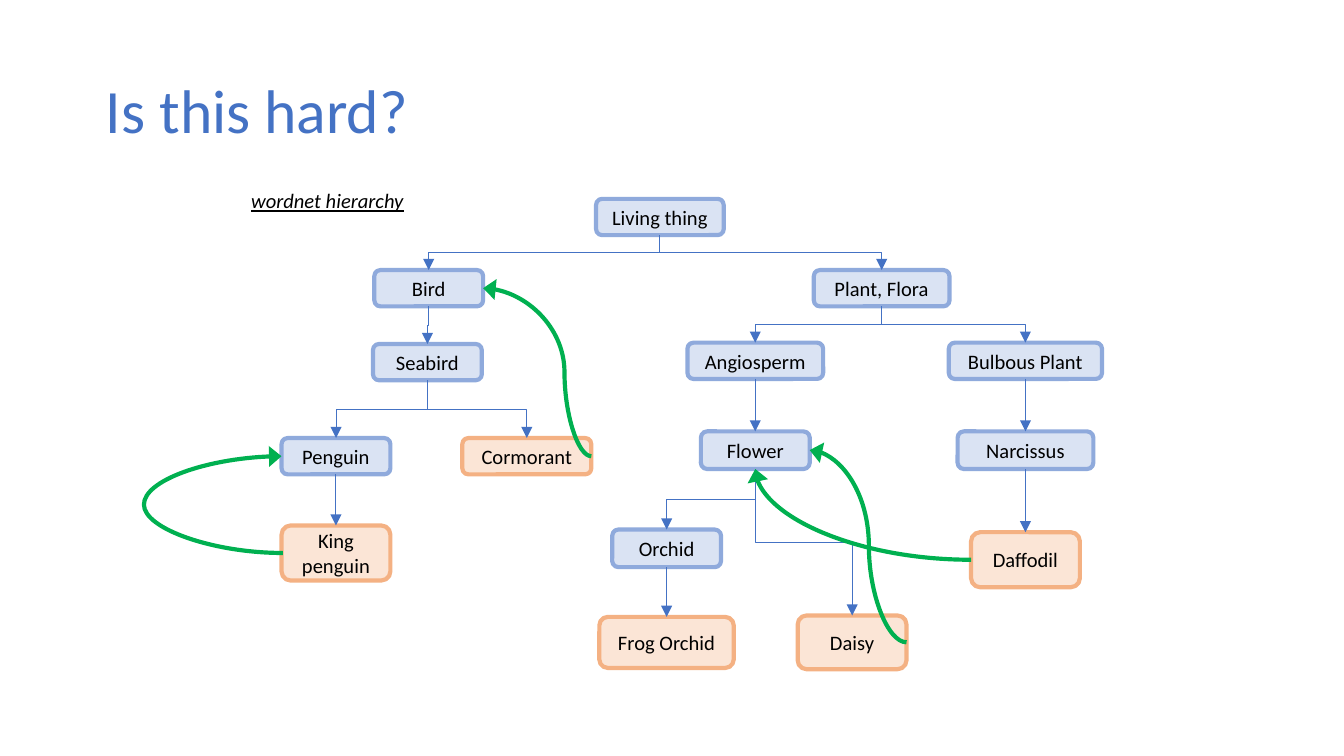
from pptx import Presentation
from pptx.dml.color import RGBColor
from pptx.enum.shapes import MSO_CONNECTOR, MSO_SHAPE
from pptx.enum.text import MSO_ANCHOR, PP_ALIGN
from pptx.oxml.ns import qn
from pptx.util import Inches, Pt
from lxml import etree

ROUNDED = MSO_SHAPE.ROUNDED_RECTANGLE
STRAIGHT, ELBOW, CURVE = MSO_CONNECTOR.STRAIGHT, MSO_CONNECTOR.ELBOW, MSO_CONNECTOR.CURVE
MIDDLE, TOP_ANCHOR = MSO_ANCHOR.MIDDLE, MSO_ANCHOR.TOP
LEFT_ALIGN, CENTER = PP_ALIGN.LEFT, PP_ALIGN.CENTER
TOP, LEFT, BOTTOM, RIGHT = range(4)

COLORS = {
    "title": "4472C4", "text": "000000", "tree": "4472C4", "jump": "00B050",
    "class_fill": "DAE3F3", "class_line": "8FAADC",
    "leaf_fill": "FBE5D6", "leaf_line": "F4B183",
}
FONT = "Calibri"

# name: (kind, centre x, top, width, height)
NODES = {
    "Living thing": ("class", 4.91, 1.48, 0.95, 0.27),
    "Bird": ("class", 3.19, 2.01, 0.81, 0.27),
    "Plant, Flora": ("class", 6.56, 2.01, 1.01, 0.27),
    "Seabird": ("class", 3.18, 2.56, 0.81, 0.27),
    "Angiosperm": ("class", 5.62, 2.55, 1.01, 0.27),
    "Bulbous Plant": ("class", 7.63, 2.55, 1.14, 0.27),
    "Penguin": ("class", 2.5, 3.26, 0.81, 0.27),
    "Cormorant": ("leaf", 3.92, 3.26, 0.96, 0.27),
    "Flower": ("class", 5.62, 3.21, 0.81, 0.28),
    "Narcissus": ("class", 7.63, 3.21, 1.01, 0.28),
    "King penguin": ("leaf", 2.5, 3.91, 0.81, 0.41),
    "Orchid": ("class", 4.96, 3.94, 0.81, 0.28),
    "Daffodil": ("leaf", 7.63, 3.96, 0.81, 0.41),
    "Frog Orchid": ("leaf", 4.96, 4.59, 1.0, 0.38),
    "Daisy": ("leaf", 6.34, 4.58, 0.81, 0.4),
}
CHILDREN = {
    "Living thing": ["Bird", "Plant, Flora"],
    "Bird": ["Seabird"],
    "Seabird": ["Penguin", "Cormorant"],
    "Penguin": ["King penguin"],
    "Plant, Flora": ["Angiosperm", "Bulbous Plant"],
    "Angiosperm": ["Flower"],
    "Flower": ["Orchid", "Daisy"],
    "Orchid": ["Frog Orchid"],
    "Bulbous Plant": ["Narcissus"],
    "Narcissus": ["Daffodil"],
}
# from, side, to, side, distance to the bend (None: a single quarter turn)
JUMPS = [
    ("Cormorant", RIGHT, "Bird", RIGHT, 0.2),
    ("King penguin", LEFT, "Penguin", LEFT, 1.05),
    ("Daisy", RIGHT, "Flower", RIGHT, 0.28),
    ("Daffodil", LEFT, "Flower", BOTTOM, None),
]


def write_text(shape, text, color, font, align, anchor, wrap, margin):
    frame = shape.text_frame
    settings = {"word_wrap": wrap, "vertical_anchor": anchor,
                "margin_left": Inches(margin), "margin_right": Inches(margin),
                "margin_top": Inches(0.04), "margin_bottom": Inches(0.04)}
    for name, value in settings.items():
        setattr(frame, name, value)
    paragraph = frame.paragraphs[0]
    paragraph.alignment = align
    run = paragraph.add_run()
    run.text = text
    for name, value in {"name": FONT, **font}.items():
        setattr(run.font, name, value)
    run.font.color.rgb = RGBColor.from_string(COLORS[color])
    return paragraph


def side_point(name, side):
    """Middle of one side of a node, in inches."""
    _, center, top, width, height = NODES[name]
    return {
        TOP: (center, top), BOTTOM: (center, top + height),
        LEFT: (center - width / 2, top + height / 2),
        RIGHT: (center + width / 2, top + height / 2),
    }[side]


def add_arrow(slide, kind, start, end, color, width, head_width):
    arrow = slide.shapes.add_connector(kind, *(Inches(v) for v in (*start, *end)))
    arrow.line.color.rgb = RGBColor.from_string(COLORS[color])
    arrow.line.width = Pt(width)
    line = arrow.line._get_or_add_ln()
    etree.SubElement(line, qn("a:tailEnd"), type="triangle", w=head_width)
    etree.SubElement(arrow._element.spPr, qn("a:effectLst"))
    return arrow


def turn_downward(arrow, start, end):
    """Rotate an elbow so that it leaves and arrives vertically."""
    across, down = abs(end[0] - start[0]), end[1] - start[1]
    arrow.left = Inches((start[0] + end[0] - down) / 2)
    arrow.top = Inches((start[1] + end[1] - across) / 2)
    arrow.width, arrow.height = Inches(down), Inches(across)
    to_right = end[0] > start[0]
    frame = arrow._element.spPr.find(qn("a:xfrm"))
    frame.set("rot", str((270 if to_right else 90) * 60000))
    frame.set("flipH", str(int(to_right)))


def add_branch(slide, boxes, parent, child):
    start, end = side_point(parent, BOTTOM), side_point(child, TOP)
    straight = start[0] == end[0]
    kind = STRAIGHT if straight else ELBOW
    arrow = add_arrow(slide, kind, start, end, "tree", 0.5, "med")
    if straight:
        arrow.begin_connect(boxes[parent], BOTTOM)
        arrow.end_connect(boxes[child], TOP)
    else:
        turn_downward(arrow, start, end)


def add_jump(slide, source, source_side, target, target_side, bend):
    start, end = side_point(source, source_side), side_point(target, target_side)
    # A bend is a share of the width, so the width must not be zero.
    width = max(start[0] - end[0], 0.01)
    arrow = add_arrow(slide, CURVE, (end[0] + width, start[1]), end, "jump", 2.25, "lg")
    geometry = arrow._element.spPr.find(qn("a:prstGeom"))
    if bend is None:
        geometry.set("prst", "curvedConnector2")
    else:
        guides = geometry.find(qn("a:avLst"))
        etree.SubElement(guides, qn("a:gd"), name="adj1",
                         fmla=f"val {round(bend / width * 100000)}")


def add_node(slide, name):
    kind, center, top, width, height = NODES[name]
    box = slide.shapes.add_shape(
        ROUNDED, *(Inches(v) for v in (center - width / 2, top, width, height)))
    box.shadow.inherit = False
    box.fill.solid()
    box.fill.fore_color.rgb = RGBColor.from_string(COLORS[kind + "_fill"])
    box.line.color.rgb = RGBColor.from_string(COLORS[kind + "_line"])
    box.line.width = Pt(2.25)
    write_text(box, name, "text", {"size": Pt(11)}, CENTER, MIDDLE, True, 0.05)
    return box


def main():
    presentation = Presentation()
    presentation.slide_width = Inches(10)
    presentation.slide_height = Inches(10 * 9 / 16)
    slide = presentation.slides.add_slide(presentation.slide_layouts[6])

    title = slide.shapes.add_textbox(Inches(0.69), Inches(0.3), Inches(8.62), Inches(1.09))
    paragraph = write_text(title, "Is this hard?", "title", {"size": Pt(33)},
                           LEFT_ALIGN, MIDDLE, True, 0.1)
    paragraph.line_spacing = 0.9

    caption = slide.shapes.add_textbox(Inches(1.77), Inches(1.35), Inches(1.34), Inches(0.29))
    caption_font = {"size": Pt(11), "italic": True, "underline": True}
    write_text(caption, "wordnet hierarchy", "text", caption_font,
               LEFT_ALIGN, TOP_ANCHOR, False, 0.1)
    caption.text_frame.margin_top = Inches(0.05)

    boxes = {name: add_node(slide, name) for name in NODES}
    for parent, children in CHILDREN.items():
        for child in children:
            add_branch(slide, boxes, parent, child)
    for jump in JUMPS:
        add_jump(slide, *jump)
    presentation.save("out.pptx")


if __name__ == "__main__":
    main()
